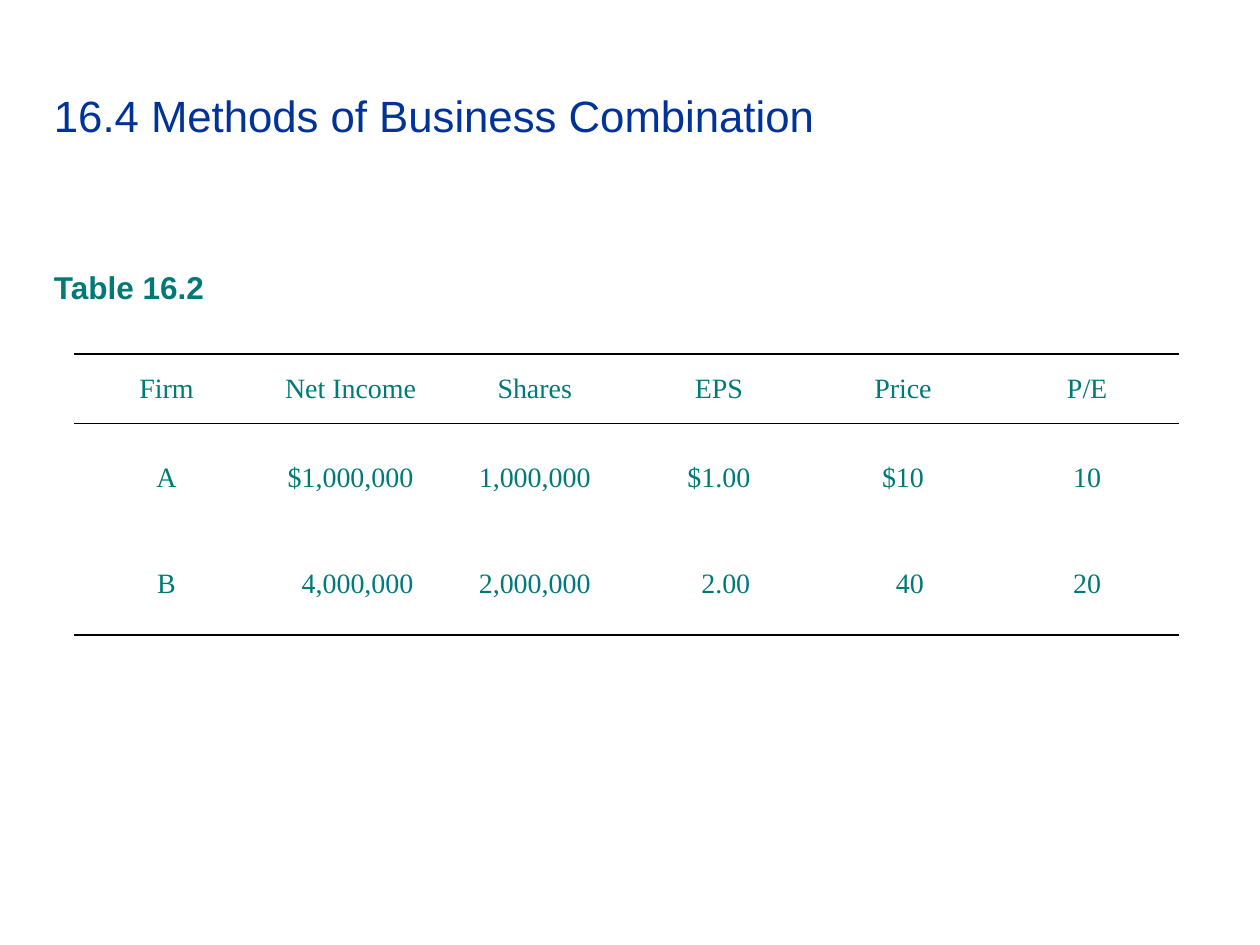
from typing import NamedTuple

from lxml import etree
from pptx import Presentation
from pptx.dml.color import RGBColor
from pptx.enum import text
from pptx.oxml import ns
from pptx.util import Inches, Pt

BLUE = RGBColor(0x00, 0x33, 0x99)
TEAL = RGBColor(0x00, 0x7A, 0x77)
BLACK = RGBColor(0x00, 0x00, 0x00)


class Box(NamedTuple):
    left: float
    top: float
    width: float
    height: float

    def lengths(self) -> list:
        return [Inches(v) for v in self]


TITLE = Box(0.33, 0.67, 7.51, 0.48)
CAPTION = Box(0.33, 2.08, 4.59, 0.5)
TABLE = Box(0.59, 2.81, 8.77, 2.23)
ROW_HEIGHTS = (0.55, 0.87, 0.81)
ROWS = (
    ("Firm", "Net Income", "Shares", "EPS", "Price", "P/E"),
    ("A", "$1,000,000", "1,000,000", "$1.00", "$10", "10"),
    ("B", "4,000,000", "2,000,000", "2.00", "40", "20"),
)
DOLLAR_WIDTH = 0.11


def write(tf, content: str, *, size: float, font="Arial", color=TEAL,
          bold=False, align=text.PP_ALIGN.LEFT) -> None:
    p = tf.paragraphs[0]
    p.alignment = align
    r = p.add_run()
    r.text = content
    r.font.name = font
    r.font.size = Pt(size)
    r.font.bold = bold
    r.font.color.rgb = color


def add_text(s, box: Box, content: str, *, anchor=text.MSO_ANCHOR.TOP, **fmt) -> None:
    tf = s.shapes.add_textbox(*box.lengths()).text_frame
    tf.word_wrap = True
    tf.vertical_anchor = anchor
    write(tf, content, **fmt)


def set_borders(cell, ruled: str) -> None:
    """Rule the sides named in `ruled` (letters of LRTB) and clear the others."""
    props = cell._tc.get_or_add_tcPr()
    for i, side in enumerate("LRTB"):
        ln = etree.Element(ns.qn(f"a:ln{side}"), w=str(Pt(1)))
        if side in ruled:
            fill = etree.SubElement(ln, ns.qn("a:solidFill"))
            etree.SubElement(fill, ns.qn("a:srgbClr"), val=str(BLACK))
        else:
            etree.SubElement(ln, ns.qn("a:noFill"))
        props.insert(i, ln)


def add_firm_table(s) -> None:
    table = s.shapes.add_table(len(ROWS), len(ROWS[0]), *TABLE.lengths()).table
    table.first_row = table.horz_banding = False
    for column in table.columns:
        column.width = Inches(TABLE.width / len(ROWS[0]))
    borders = ("TB", "T", "B")
    for i, (row, height) in enumerate(zip(ROWS, ROW_HEIGHTS)):
        table.rows[i].height = Inches(height)
        for j, content in enumerate(row):
            cell = table.cell(i, j)
            cell.fill.background()
            set_borders(cell, borders[i])
            cell.vertical_anchor = text.MSO_ANCHOR.MIDDLE
            # Align the digits with those after the dollar sign above
            if ROWS[i - 1][j].startswith("$") and i == 2:
                cell.margin_left = Inches(0.1 + DOLLAR_WIDTH)
            write(cell.text_frame, content, size=16, font="Times New Roman",
                  align=text.PP_ALIGN.CENTER)


def main() -> None:
    prs = Presentation()
    prs.slide_width, prs.slide_height = Inches(10), Inches(7.5)
    s = prs.slides.add_slide(prs.slide_layouts[6])
    add_text(s, TITLE, "16.4 Methods of Business Combination", size=25,
             color=BLUE, anchor=text.MSO_ANCHOR.MIDDLE)
    add_text(s, CAPTION, "Table 16.2", size=18, bold=True)
    add_firm_table(s)
    prs.save("out.pptx")


if __name__ == "__main__":
    main()
